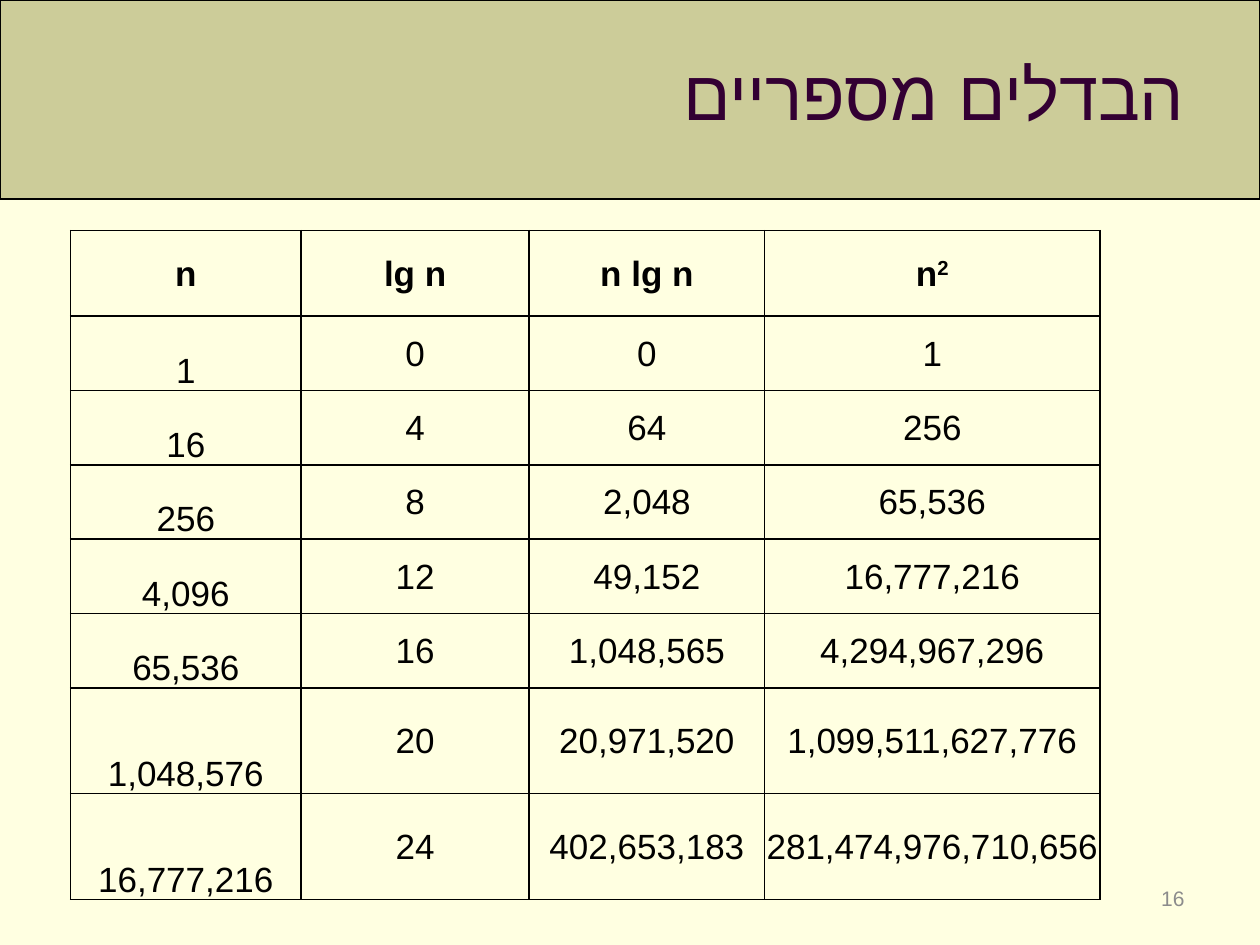
from dataclasses import dataclass

from lxml.etree import SubElement
from pptx import Presentation
from pptx.dml.color import RGBColor
from pptx.enum.shapes import MSO_SHAPE
from pptx.enum.text import MSO_ANCHOR, PP_ALIGN
from pptx.oxml.ns import qn
from pptx.util import Inches, Pt


@dataclass(frozen=True)
class Theme:
    paper: str = "FFFFE1"
    band: str = "CCCC99"
    ink: str = "000000"
    title: str = "330033"
    muted: str = "8C8C8C"
    body_font: str = "Arial"
    title_font: str = "Times New Roman"
    title_size: int = 40
    cell_size: int = 20
    number_size: int = 12
    band_line: float = 0.75
    grid_line: float = 1


THEME = Theme()
WIDTH, HEIGHT = 10, 7.5
COLUMNS = [1.83, 1.81, 1.87, 2.66]
ROWS = [0.68] + [0.59] * 5 + [0.84] * 2
HEADER = ["n", "lg n", "n lg n", "n"]
GROWTH = [
    ["1", "0", "0", "1"],
    ["16", "4", "64", "256"],
    ["256", "8", "2,048", "65,536"],
    ["4,096", "12", "49,152", "16,777,216"],
    ["65,536", "16", "1,048,565", "4,294,967,296"],
    ["1,048,576", "20", "20,971,520", "1,099,511,627,776"],
    ["16,777,216", "24", "402,653,183", "281,474,976,710,656"],
]


def rgb(color):
    return RGBColor.from_string(color)


def set_all(obj, **values):
    for name, value in values.items():
        setattr(obj, name, value)


def add_run(p, text, size, color, font=THEME.body_font, bold=False, raised=False):
    r = p.add_run()
    r.text = text
    set_all(r.font, size=Pt(size), name=font, bold=bold)
    r.font.color.rgb = rgb(color)
    props = r._r.get_or_add_rPr()
    # Hebrew letters take the complex-script font
    SubElement(props, qn("a:cs"), typeface=THEME.body_font)
    if raised:
        props.set("baseline", "30000")


def align_rtl(p, alignment):
    p.alignment = alignment
    p._p.get_or_add_pPr().set("rtl", "1")


def add_band(s, height):
    """Draw the heading band behind everything else on the slide."""
    sp = s.shapes.add_shape(MSO_SHAPE.RECTANGLE, 0, 0, Inches(WIDTH), Inches(height))
    sp.shadow.inherit = False
    sp.fill.solid()
    sp.fill.fore_color.rgb = rgb(THEME.band)
    sp.line.color.rgb = rgb(THEME.ink)
    sp.line.width = Pt(THEME.band_line)
    s.shapes.element.insert(2, sp.element)


def set_title(s, text):
    sp = s.shapes.title
    set_all(sp, left=Inches(0.05 * WIDTH), top=Inches(0.04 * HEIGHT),
            width=Inches(0.9 * WIDTH), height=Inches(0.87))
    tf = sp.text_frame
    tf.vertical_anchor = MSO_ANCHOR.MIDDLE
    p = tf.paragraphs[0]
    align_rtl(p, PP_ALIGN.RIGHT)
    add_run(p, text, THEME.title_size, THEME.title, THEME.title_font)


def add_page_number(s, text):
    box_width = 2.33
    sp = s.shapes.add_textbox(Inches(0.95 * WIDTH - box_width), Inches(7),
                              Inches(box_width), Inches(0.25))
    tf = sp.text_frame
    set_all(tf, word_wrap=True, vertical_anchor=MSO_ANCHOR.MIDDLE)
    p = tf.paragraphs[0]
    align_rtl(p, PP_ALIGN.RIGHT)
    add_run(p, text, THEME.number_size, THEME.muted)


def set_borders(cell):
    props = cell._tc.get_or_add_tcPr()
    for side in ("lnL", "lnR", "lnT", "lnB"):
        line = SubElement(props, qn(f"a:{side}"), w=str(Pt(THEME.grid_line)))
        fill = SubElement(line, qn("a:solidFill"))
        SubElement(fill, qn("a:srgbClr"), val=THEME.ink)


def format_cell(cell, text, anchor, bold, exponent=""):
    inset = Inches(0.01)
    set_all(cell, margin_left=inset, margin_right=inset, margin_top=inset,
            margin_bottom=0, vertical_anchor=anchor)
    set_borders(cell)
    cell.fill.background()
    p = cell.text_frame.paragraphs[0]
    align_rtl(p, PP_ALIGN.CENTER)
    add_run(p, text, THEME.cell_size, THEME.ink, bold=bold)
    if exponent:
        add_run(p, exponent, THEME.cell_size, THEME.ink, bold=bold, raised=True)


def add_growth_table(s, left, top):
    table = s.shapes.add_table(len(ROWS), len(COLUMNS), Inches(left), Inches(top),
                               Inches(sum(COLUMNS)), Inches(sum(ROWS))).table
    set_all(table, first_row=False, horz_banding=False)
    for column, width in zip(table.columns, COLUMNS):
        column.width = Inches(width)
    for row, height in zip(table.rows, ROWS):
        row.height = Inches(height)
    last = len(COLUMNS) - 1
    for i, values in enumerate([HEADER] + GROWTH):
        for j, text in enumerate(values):
            is_header = i == 0
            low = j == 0 and not is_header
            anchor = MSO_ANCHOR.BOTTOM if low else MSO_ANCHOR.MIDDLE
            exponent = "2" if is_header and j == last else ""
            format_cell(table.cell(i, j), text, anchor, is_header, exponent)


def main():
    prs = Presentation()
    set_all(prs, slide_width=Inches(WIDTH), slide_height=Inches(HEIGHT))
    s = prs.slides.add_slide(prs.slide_layouts[5])
    s.background.fill.solid()
    s.background.fill.fore_color.rgb = rgb(THEME.paper)
    add_band(s, 1.58)
    add_page_number(s, "16")
    set_title(s, "הבדלים מספריים")
    add_growth_table(s, 0.56, 1.83)
    prs.save("out.pptx")


if __name__ == "__main__":
    main()
